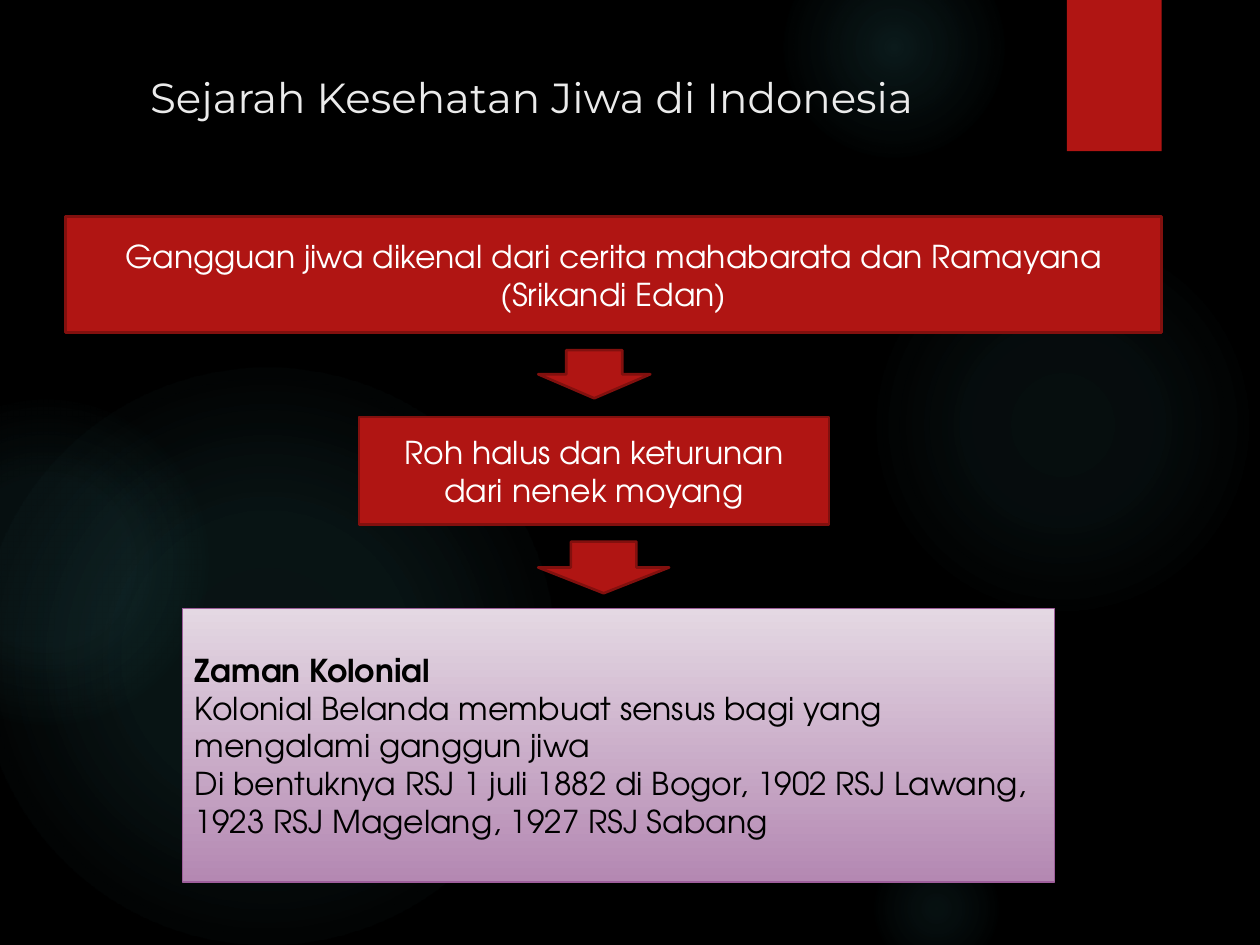
"""Build a slide on the history of mental health in Indonesia."""
from pptx import Presentation
from pptx.dml.color import RGBColor
from pptx.enum.shapes import MSO_SHAPE
from pptx.enum.text import MSO_ANCHOR, PP_ALIGN
from pptx.oxml import parse_xml
from pptx.oxml.ns import nsdecls, qn
from pptx.util import Cm, Pt

BLACK = RGBColor(0x00, 0x00, 0x00)
WHITE = RGBColor(0xFF, 0xFF, 0xFF)
TITLE_GREY = RGBColor(0xEB, 0xEB, 0xEB)
RED = RGBColor(0xB0, 0x15, 0x13)
DARK_RED = RGBColor(0x82, 0x10, 0x0E)
TEAL = RGBColor(0x50, 0xB9, 0xC1)
PALE_PURPLE = RGBColor(0xE4, 0xD8, 0xE3)
MID_PURPLE = RGBColor(0xB4, 0x88, 0xB2)
PURPLE = RGBColor(0x9E, 0x5E, 0x9B)

TITLE_FONT = "Montserrat"
BODY_FONT = "TeX Gyre Adventor"

RADIAL = ('<a:path path="circle"><a:fillToRect l="50000" t="50000" '
          'r="50000" b="50000"/></a:path>')
DOWNWARD = '<a:lin ang="5400000" scaled="0"/>'

GLOWS = [
    (17.5, 4.65, 7.82, [(0, 7), (36, 6), (69, 0)]),
    (15.8, -1.27, 4.45, [(0, 14), (36, 7), (73, 0)]),
    (17.5, 16.94, 2.74, [(0, 9), (36, 5), (66, 0)]),
    (-0.43, 7.42, 11.63, [(0, 11), (36, 10), (75, 0)]),
    (-2.34, 8.05, 6.55, [(0, 8), (36, 8), (72, 0)]),
]


def add_block(page, kind, left, top, width, height, fill=None, line=None, weight=1.5):
    """Add a preset shape with a plain fill and an optional outline."""
    block = page.shapes.add_shape(kind, Cm(left), Cm(top), Cm(width), Cm(height))
    block.shadow.inherit = False
    if fill is None:
        block.fill.background()
    else:
        block.fill.solid()
        block.fill.fore_color.rgb = fill
    if line is None:
        block.line.fill.background()
    else:
        block.line.color.rgb = line
        block.line.width = Pt(weight)
    return block


def set_gradient(block, stops, direction):
    """Replace the empty fill by a gradient of (position, colour, opacity) stops."""
    marks = "".join(
        f'<a:gs pos="{position * 1000}"><a:srgbClr val="{colour}">'
        f'<a:alpha val="{opacity * 1000}"/></a:srgbClr></a:gs>'
        for position, colour, opacity in stops)
    gradient = parse_xml(f'<a:gradFill {nsdecls("a")} rotWithShape="1">'
                         f'<a:gsLst>{marks}</a:gsLst>{direction}</a:gradFill>')
    properties = block._element.spPr
    properties.replace(properties.find(qn("a:noFill")), gradient)


def add_glow(page, left, top, size, stops):
    """Add a round teal glow."""
    glow = add_block(page, MSO_SHAPE.OVAL, left, top, size, size)
    set_gradient(glow, [(position, TEAL, opacity) for position, opacity in stops], RADIAL)


def write(box, lines, size, font, colour, align, anchor=MSO_ANCHOR.MIDDLE):
    """Fill a box with one paragraph for each (text, bold) line."""
    frame = box.text_frame
    frame.word_wrap = True
    frame.vertical_anchor = anchor
    for index, (text, bold) in enumerate(lines):
        para = frame.add_paragraph() if index else frame.paragraphs[0]
        para.alignment = align
        span = para.add_run()
        span.text = text
        span.font.size = Pt(size)
        span.font.name = font
        span.font.bold = bold
        span.font.color.rgb = colour


def add_title(page, text):
    """Add the slide heading."""
    box = page.shapes.add_textbox(Cm(0.91), Cm(1.32), Cm(19.61), Cm(2.18))
    write(box, [(text, False)], 24, TITLE_FONT, TITLE_GREY, PP_ALIGN.CENTER, MSO_ANCHOR.TOP)


def add_step(page, left, top, width, height, text):
    """Add a red step with centred text."""
    step = add_block(page, MSO_SHAPE.RECTANGLE, left, top, width, height, RED, DARK_RED)
    write(step, [(text, False)], 18, BODY_FONT, WHITE, PP_ALIGN.CENTER)


def add_arrow(page, top, width, height):
    """Add a red block arrow pointing down."""
    add_block(page, MSO_SHAPE.DOWN_ARROW, 10.85, top, width, height, RED, DARK_RED)


def add_colonial_panel(page, lines):
    """Add the purple panel on the colonial era."""
    panel = add_block(page, MSO_SHAPE.RECTANGLE, 3.68, 12.27, 17.58, 5.51,
                      line=PURPLE, weight=0.75)
    set_gradient(panel, [(0, PALE_PURPLE, 100), (100, MID_PURPLE, 100)], DOWNWARD)
    write(panel, lines, 18, BODY_FONT, BLACK, PP_ALIGN.LEFT)


def main():
    """Build and save the slide."""
    deck = Presentation()
    deck.slide_width, deck.slide_height = Cm(25.4), Cm(19.05)
    page = deck.slides.add_slide(deck.slide_layouts[6])
    page.background.fill.solid()
    page.background.fill.fore_color.rgb = BLACK

    for glow in GLOWS:
        add_glow(page, *glow)
    add_block(page, MSO_SHAPE.RECTANGLE, 21.51, 0, 1.91, 3.05, RED)
    add_title(page, "Sejarah Kesehatan Jiwa di Indonesia")

    add_step(page, 1.32, 4.37, 22.1, 2.33,
             "Gangguan jiwa dikenal dari cerita mahabarata dan Ramayana (Srikandi Edan)")
    add_arrow(page, 7.06, 2.26, 0.97)
    add_step(page, 7.24, 8.41, 9.47, 2.16, "Roh halus dan keturunan dari nenek moyang")
    add_arrow(page, 10.92, 2.64, 1.04)
    add_colonial_panel(page, [
        ("Zaman Kolonial", True),
        ("Kolonial Belanda membuat sensus bagi yang mengalami ganggun jiwa", False),
        ("Di bentuknya RSJ 1 juli 1882 di Bogor, 1902 RSJ Lawang, "
         "1923 RSJ Magelang, 1927 RSJ Sabang", False),
    ])
    deck.save("out.pptx")


if __name__ == "__main__":
    main()
